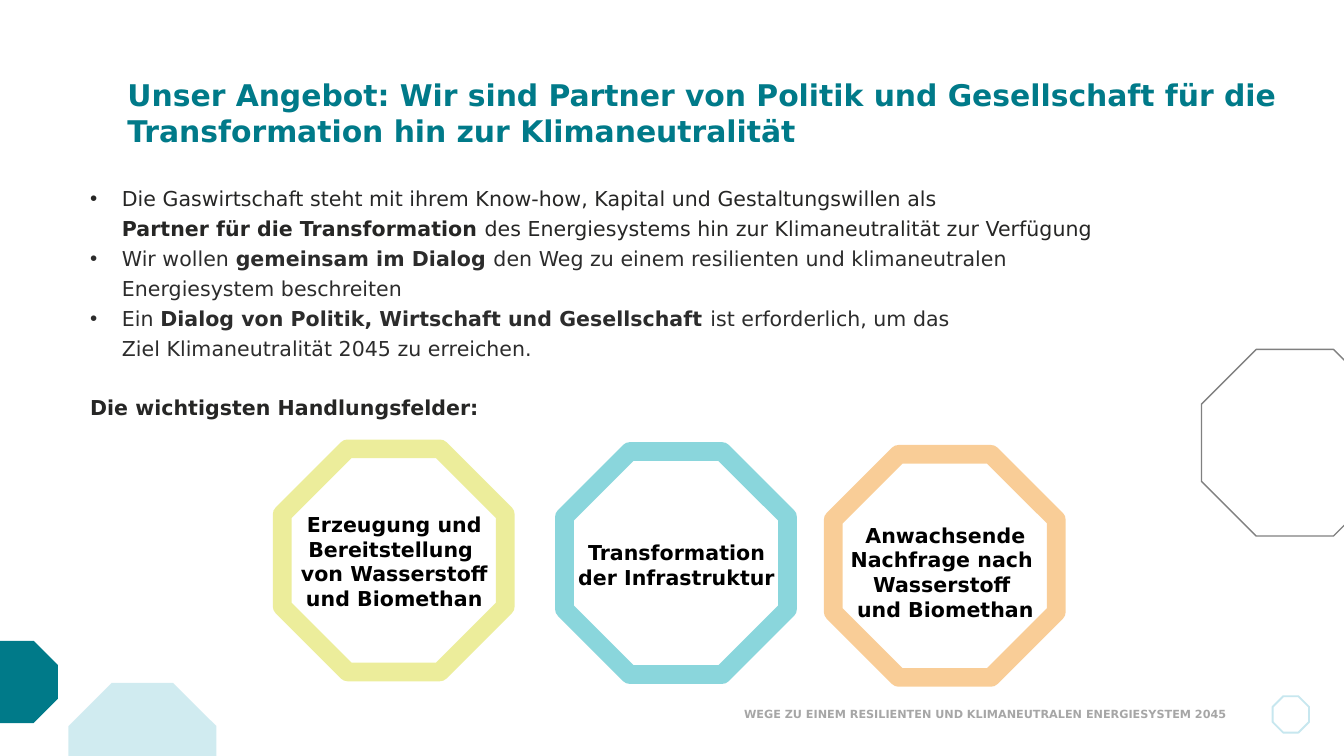
"""Build the slide on the gas industry's offer and its fields of action."""
from dataclasses import dataclass
from typing import Optional

from lxml.etree import SubElement
from pptx import Presentation
from pptx.dml.color import RGBColor
from pptx.enum.shapes import MSO_SHAPE as Form
from pptx.enum.text import MSO_ANCHOR as Anchor, PP_ALIGN as Align
from pptx.oxml.ns import qn
from pptx.util import Pt

FONT = "DejaVu Sans"
TEAL = RGBColor(0x00, 0x7A, 0x89)
PALE = RGBColor(0xA3, 0xD8, 0xE3)
ICE = RGBColor(0xC7, 0xE7, 0xEF)
LIME = RGBColor(0xDA, 0xDD, 0x38)
AQUA = RGBColor(0x17, 0xAF, 0xBA)
AMBER = RGBColor(0xF5, 0x9D, 0x31)
GRAY = RGBColor(0x80, 0x80, 0x80)
SILVER = RGBColor(0xA6, 0xA6, 0xA6)
INK = RGBColor(0x26, 0x26, 0x25)
SOOT = RGBColor(0x2C, 0x2C, 0x2C)
BLACK = RGBColor(0x00, 0x00, 0x00)
WHITE = RGBColor(0xFF, 0xFF, 0xFF)

RING = 119.5
PAD = 3.6


@dataclass
class Octagon:
    left: float
    top: float
    size: float
    fill: Optional[RGBColor] = None
    line: Optional[RGBColor] = None
    width: float = 0
    fade: bool = False


@dataclass
class Run:
    text: str
    color: RGBColor = INK
    bold: bool = False


@dataclass
class Field:
    left: float
    top: float
    color: RGBColor
    drop: float
    lines: list[str]


DECOR = [
    Octagon(36.7, 365.8, 79.2, fill=PALE, fade=True),
    Octagon(-13, 343.4, 44, fill=TEAL),
    Octagon(643.7, 187.2, 100, line=GRAY, width=0.75),
    Octagon(681.8, 373, 19.5, fill=WHITE, line=ICE, width=1),
]

POINTS = [
    [Run("Die Gaswirtschaft steht mit ihrem Know-how, Kapital und Gestaltungswillen als \n"),
     Run("Partner für die Transformation ", bold=True),
     Run("des Energiesystems hin zur Klimaneutralität zur Verfügung")],
    [Run("Wir wollen ", SOOT),
     Run("gemeinsam im Dialog ", SOOT, True),
     Run("den Weg zu einem resilienten und klimaneutralen \nEnergiesystem beschreiten", SOOT)],
    [Run("Ein ", SOOT),
     Run("Dialog von Politik, Wirtschaft und Gesellschaft ", SOOT, True),
     Run("ist erforderlich, um das \nZiel Klimaneutralität 2045 zu erreichen.", SOOT)],
]

FIELDS = [
    Field(446.4, 243.4, AMBER, 33.1,
          ["Anwachsende Nachfrage nach ", "Wasserstoff ", "und Biomethan"]),
    Field(302.4, 241.9, AQUA, 43.9, ["Transformation der Infrastruktur"]),
    Field(151.2, 240.5, LIME, 30.2,
          ["Erzeugung und Bereitstellung \nvon Wasserstoff und Biomethan"]),
]


def fade(holder) -> None:
    """Make the solid colour inside an element half transparent."""
    color = next(holder.iter(qn("a:srgbClr")))
    SubElement(color, qn("a:alpha")).set("val", "50000")


def draw(slide, item: Octagon) -> None:
    """Draw one octagon."""
    shape = slide.shapes.add_shape(
        Form.OCTAGON, Pt(item.left), Pt(item.top), Pt(item.size), Pt(item.size))
    shape.shadow.inherit = False
    if item.fill is None:
        shape.fill.background()
    else:
        shape.fill.solid()
        shape.fill.fore_color.rgb = item.fill
    if item.line is None:
        shape.line.fill.background()
    else:
        shape.line.color.rgb = item.line
        shape.line.width = Pt(item.width)
    if item.fade:
        fade(shape.fill._xPr if item.line is None else shape.line._ln)


def add_box(slide, left: float, top: float, width: float, height: float):
    """Add a wrapping text box and return its frame."""
    frame = slide.shapes.add_textbox(Pt(left), Pt(top), Pt(width), Pt(height)).text_frame
    frame.word_wrap = True
    return frame


def write(para, runs: list[Run], size: float) -> None:
    """Add runs to a paragraph, with a line break at each newline."""
    for item in runs:
        for i, part in enumerate(item.text.split("\n")):
            if i:
                para.add_line_break()
            if not part:
                continue
            run = para.add_run()
            run.text = part
            font = run.font
            font.name, font.size, font.bold = FONT, Pt(size), item.bold
            font.color.rgb = item.color


def indent(para, left: float, first: float = 0) -> None:
    """Set the indents of a paragraph, with a bullet if it hangs."""
    props = para._p.get_or_add_pPr()
    props.set("marL", str(Pt(left)))
    props.set("indent", str(Pt(first)))
    if first:
        SubElement(props, qn("a:buFont")).set("typeface", "Arial")
        SubElement(props, qn("a:buChar")).set("char", "•")
    para.line_spacing = Pt(16)


def add_body(slide) -> None:
    """Write the bullet points and the lead-in to the fields."""
    frame = add_box(slide, 31, 93.6, 658, 115.2)
    for i, runs in enumerate(POINTS):
        para = frame.add_paragraph() if i else frame.paragraphs[0]
        indent(para, 27.2, -17)
        write(para, runs, 11)
    para = frame.add_paragraph()
    indent(para, 10.2)
    para.space_before = Pt(16)
    write(para, [Run("Die wichtigsten Handlungsfelder:", bold=True)], 11)


def add_field(slide, field: Field) -> None:
    """Draw a ring with its label."""
    draw(slide, Octagon(field.left, field.top, RING, WHITE, field.color, 10, True))
    frame = add_box(slide, field.left - PAD, field.top + field.drop, RING + 2 * PAD + 0.7, 60)
    for i, line in enumerate(field.lines):
        para = frame.add_paragraph() if i else frame.paragraphs[0]
        para.alignment = Align.CENTER
        write(para, [Run(line, BLACK, True)], 11)


def main() -> None:
    """Build and save the slide."""
    deck = Presentation()
    deck.slide_width, deck.slide_height = Pt(720), Pt(405)
    slide = deck.slides.add_slide(deck.slide_layouts[6])
    title = add_box(slide, 61.2, 37.4, 658, 44)
    write(title.paragraphs[0], [Run(
        "Unser Angebot: Wir sind Partner von Politik und Gesellschaft für die "
        "Transformation hin zur Klimaneutralität", TEAL, True)], 16)
    add_body(slide)
    for field in FIELDS:
        add_field(slide, field)
    for item in DECOR:
        draw(slide, item)
    foot = add_box(slide, 246.2, 371.5, 417.6, 21.6)
    foot.vertical_anchor = Anchor.MIDDLE
    foot.paragraphs[0].alignment = Align.RIGHT
    write(foot.paragraphs[0], [Run(
        "WEGE ZU EINEM RESILIENTEN UND KLIMANEUTRALEN ENERGIESYSTEM 2045", SILVER, True)], 6)
    deck.save("out.pptx")


if __name__ == "__main__":
    main()
